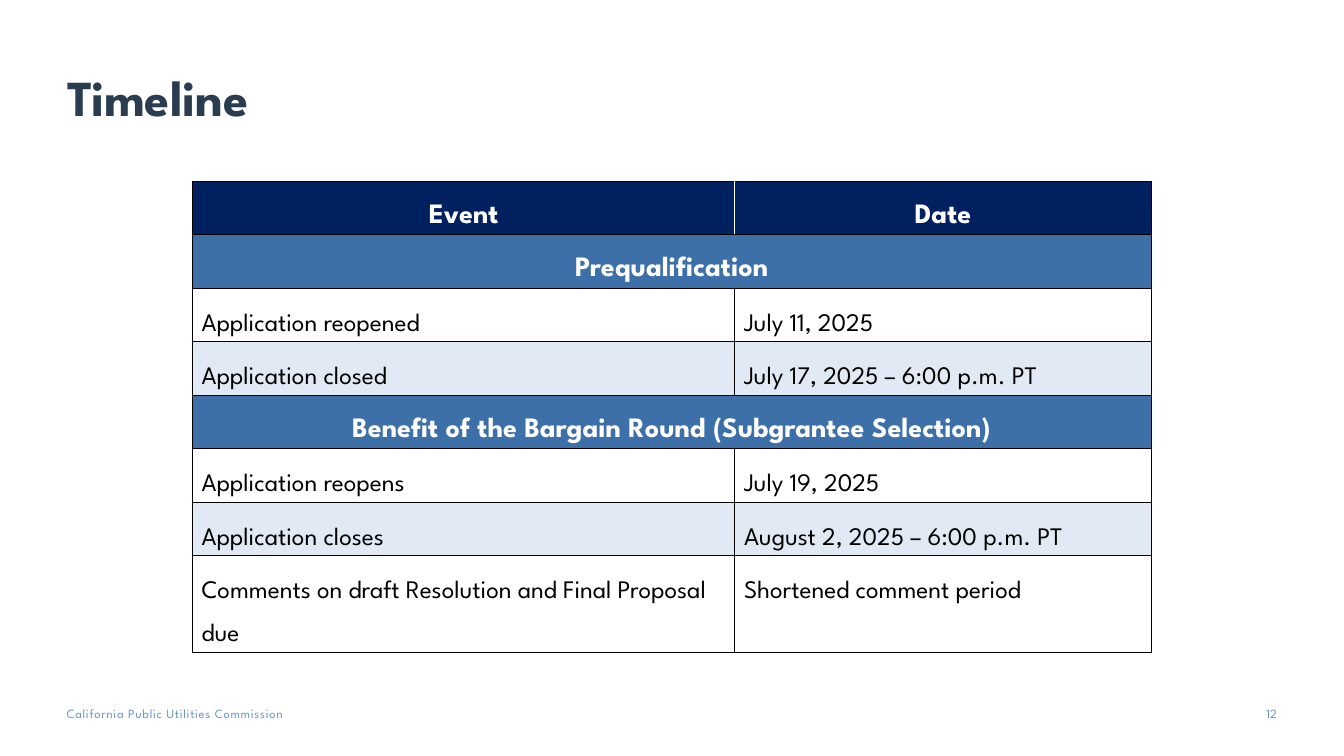
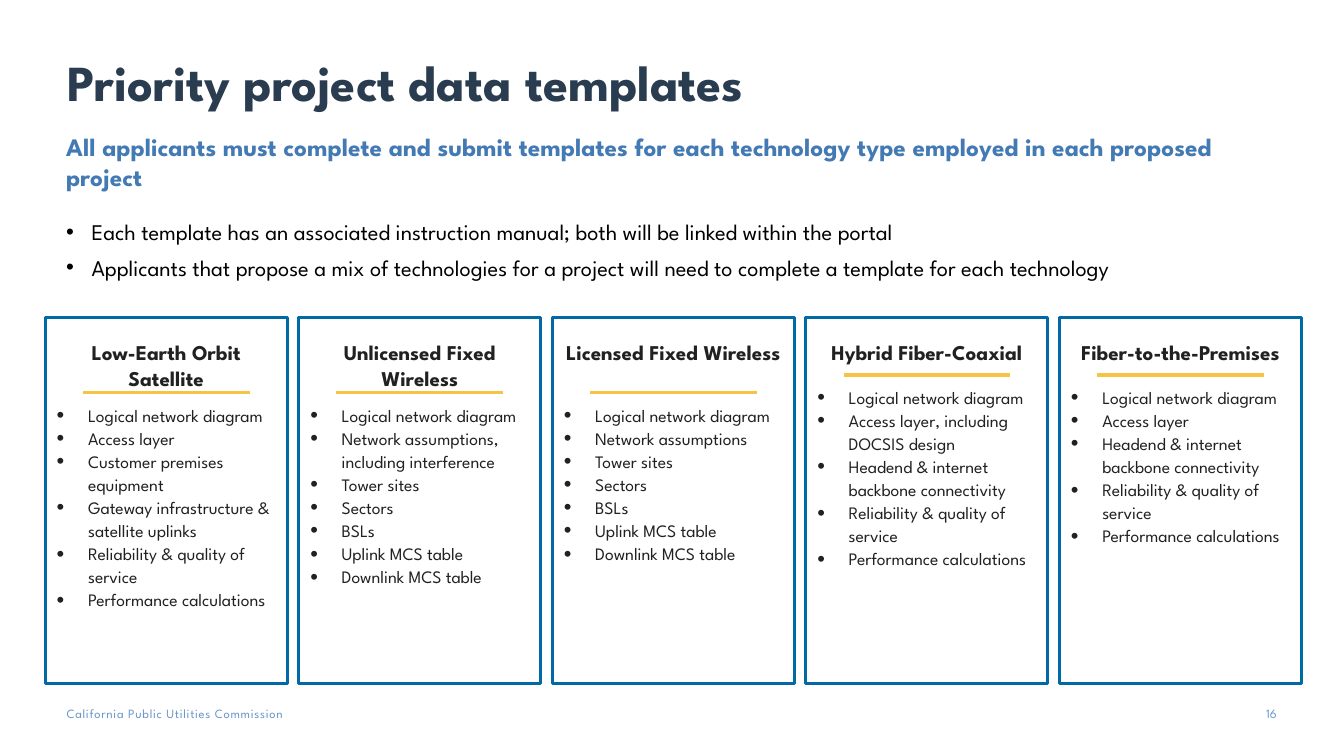
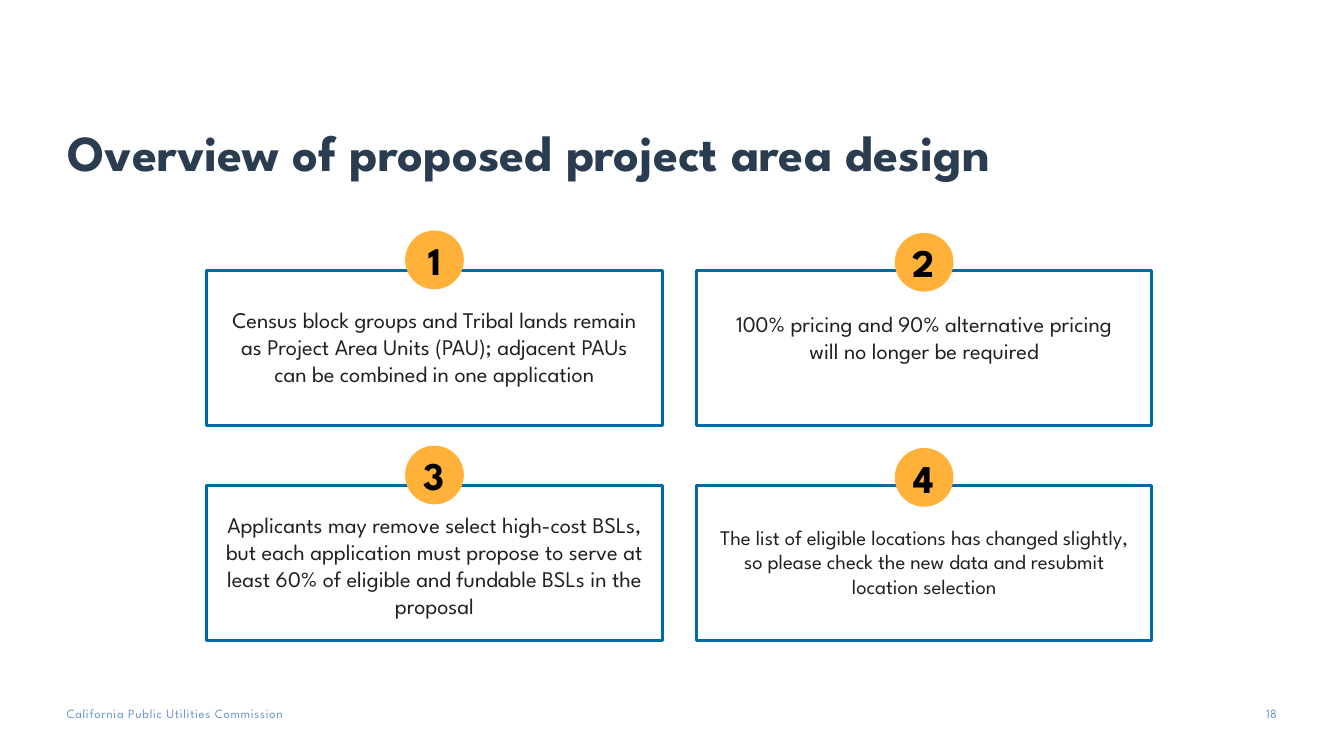
import dataclasses

import lxml.etree
import pptx
import pptx.dml.color
import pptx.enum.shapes
import pptx.enum.text
import pptx.oxml.ns
import pptx.util

Cm = pptx.util.Cm
Pt = pptx.util.Pt
qn = pptx.oxml.ns.qn
ALIGN = pptx.enum.text.PP_ALIGN
ANCHOR = pptx.enum.text.MSO_ANCHOR
SHAPE = pptx.enum.shapes.MSO_SHAPE


@dataclasses.dataclass(frozen=True)
class Theme:
    font: str = "League Spartan"
    title: str = "2A3C50"
    footer: str = "6996C9"
    subtitle: str = "437AB4"
    ink: str = "212121"
    black: str = "000000"
    white: str = "FFFFFF"
    outline: str = "0069A6"
    rule: str = "F5C445"
    badge: str = "FFB13A"
    header: str = "002060"
    section: str = "3D6FA9"
    band: str = "E1EAF4"
    title_size: float = 36
    badge_size: float = 28
    section_size: float = 20
    subtitle_size: float = 18
    cell_size: float = 18
    body_size: float = 16
    small_body_size: float = 14.8
    card_title_size: float = 15
    list_size: float = 12.5
    footer_size: float = 9
    line_width: float = 2.25


T = Theme()
FOOTER = "California Public Utilities Commission"
CENTER = {"alignment": ALIGN.CENTER}
NO_MARGINS = {f"margin_{side}": 0 for side in ("left", "right", "top", "bottom")}

TIMELINE = [
    ("Event", "Date"),
    ("Prequalification",),
    ("Application reopened", "July 11, 2025"),
    ("Application closed", "July 17, 2025 – 6:00 p.m. PT"),
    ("Benefit of the Bargain Round (Subgrantee Selection)",),
    ("Application reopens", "July 19, 2025"),
    ("Application closes", "August 2, 2025 – 6:00 p.m. PT"),
    ("Comments on draft Resolution and Final Proposal due", "Shortened comment period"),
]

DIAGRAM = "Logical network diagram"
HEADEND = "Headend & internet backbone connectivity"
QUALITY = ["Reliability & quality of service", "Performance calculations"]
WIRELESS = ["Tower sites", "Sectors", "BSLs", "Uplink MCS table", "Downlink MCS table"]
TECHNOLOGIES = [
    ("Low-Earth Orbit Satellite", 9.9,
     ["Access layer", "Customer premises equipment",
      "Gateway infrastructure & satellite uplinks", *QUALITY]),
    ("Unlicensed Fixed Wireless", 9.9,
     ["Network assumptions, including interference", *WIRELESS]),
    ("Licensed Fixed Wireless", 9.9, ["Network assumptions", *WIRELESS]),
    ("Hybrid Fiber-Coaxial", 9.45,
     ["Access layer, including DOCSIS design", HEADEND, *QUALITY]),
    ("Fiber-to-the-Premises", 9.45, ["Access layer", HEADEND, *QUALITY]),
]

DESIGN_POINTS = [
    ("Census block groups and Tribal lands remain as Project Area Units (PAU); "
     "adjacent PAUs can be combined in one application", 0.32, 0.79, T.body_size),
    ("100% pricing and 90% alternative pricing will no longer be required",
     0.32, 0.89, T.body_size),
    ("Applicants may remove select high-cost BSLs, but each application must propose "
     "to serve at least 60% of eligible and fundable BSLs in the proposal",
     0, 0.53, T.body_size),
    ("The list of eligible locations has changed slightly, so please check the new "
     "data and resubmit location selection", 0.32, 0.86, T.small_body_size),
]


def rgb(color):
    return pptx.dml.color.RGBColor.from_string(color)


def assign(target, values):
    for name, value in values.items():
        setattr(target, name, value)


def add_bullet(p, indent, percent):
    pPr = p._p.get_or_add_pPr()
    pPr.set("marL", str(Cm(indent)))
    pPr.set("indent", str(-Cm(indent)))
    for tag, name, value in (("a:buSzPct", "val", str(percent * 1000)),
                             ("a:buFont", "typeface", "Arial"),
                             ("a:buChar", "char", "•")):
        lxml.etree.SubElement(pPr, qn(tag)).set(name, value)


def write(tf, lines, size, color, bold=False, para=None, bullet=None):
    for i, line in enumerate(lines):
        p = tf.paragraphs[0] if i == 0 else tf.add_paragraph()
        assign(p, para or {})
        if bullet:
            add_bullet(p, *bullet)
        r = p.add_run()
        r.text = line
        assign(r.font, {"name": T.font, "size": Pt(size), "bold": bold})
        r.font.color.rgb = rgb(color)


def add_text(s, box, lines, size, color, frame=None, **style):
    tf = s.shapes.add_textbox(*map(Cm, box)).text_frame
    assign(tf, {"word_wrap": True, **(frame or {})})
    write(tf, lines, size, color, **style)
    return tf


def add_box(s, kind, box, fill, outline=None):
    sp = s.shapes.add_shape(kind, *map(Cm, box))
    sp.shadow.inherit = False
    sp.fill.solid()
    sp.fill.fore_color.rgb = rgb(fill)
    if outline:
        sp.line.color.rgb = rgb(outline)
        sp.line.width = Pt(T.line_width)
    else:
        sp.line.fill.background()
    return sp


def add_rule(s, x, y, width):
    line = s.shapes.add_connector(
        pptx.enum.shapes.MSO_CONNECTOR.STRAIGHT, Cm(x), Cm(y), Cm(x + width), Cm(y))
    line.line.color.rgb = rgb(T.rule)
    line.line.width = Pt(T.line_width)
    lxml.etree.SubElement(line._element.spPr, qn("a:effectLst"))


def add_slide(prs, title, number, top, height):
    s = prs.slides.add_slide(prs.slide_layouts[6])
    tf = add_text(s, (1.68, 17.78, 8.15, 0.4), [FOOTER], T.footer_size, T.footer,
                  frame=NO_MARGINS)
    tf.paragraphs[0].runs[0].font._element.set("spc", "50")
    add_text(s, (1.7, top, 30.48, height), [title], T.title_size, T.title, bold=True,
             frame={"margin_left": 0, "vertical_anchor": ANCHOR.BOTTOM})
    add_text(s, (31.12, 17.78, 1.06, 0.5), [str(number)], T.footer_size, T.footer,
             frame=NO_MARGINS, para={"alignment": ALIGN.RIGHT})
    return s


def set_borders(cell, colors):
    tcPr = cell._tc.get_or_add_tcPr()
    for side, color in zip("LRTB", colors):
        ln = lxml.etree.SubElement(tcPr, qn(f"a:ln{side}"), w=str(Pt(1)))
        fill = lxml.etree.SubElement(ln, qn("a:solidFill"))
        lxml.etree.SubElement(fill, qn("a:srgbClr"), val=color)


def format_cell(cell, fill, borders):
    set_borders(cell, borders)
    if fill:
        cell.fill.solid()
        cell.fill.fore_color.rgb = rgb(fill)
    else:
        cell.fill.background()
    assign(cell, {"margin_left": Cm(0.23), "margin_right": Cm(0.23),
                  "margin_top": Cm(0.13), "margin_bottom": Cm(0.13)})


def add_timeline(s):
    widths = (13.67, 10.49)
    heights = [1.32] * (len(TIMELINE) - 1) + [2.4]
    table = s.shapes.add_table(len(TIMELINE), len(widths), Cm(4.85), Cm(4.57),
                               Cm(sum(widths)), Cm(sum(heights))).table
    assign(table, {"first_row": False, "horz_banding": False})
    for column, width in zip(table.columns, widths):
        column.width = Cm(width)
    for i, (texts, height) in enumerate(zip(TIMELINE, heights)):
        table.rows[i].height = Cm(height)
        section = len(texts) == 1
        heading = i == 0 or section
        if section:
            table.cell(i, 0).merge(table.cell(i, 1))
        fill = (T.header if i == 0 else T.section if section
                else T.band if i % 3 == 0 else None)
        inner = T.white if i == 0 else T.black
        for j in range(len(widths)):
            sides = (T.black, inner) if j == 0 else (inner, T.black)
            format_cell(table.cell(i, j), fill, (*sides, T.black, T.black))
        for j, text in enumerate(texts):
            write(table.cell(i, j).text_frame, [text],
                  T.section_size if heading else T.cell_size,
                  T.white if heading else T.black, bold=heading,
                  para={"line_spacing": Pt(30.8),
                        "alignment": ALIGN.CENTER if heading else ALIGN.LEFT})


def add_technology(s, left, heading, rule_y, items):
    top, width = 8, 6.1
    add_box(s, SHAPE.RECTANGLE, (left, top, width, 9.22), T.white, T.outline)
    add_text(s, (left, top + 0.44, width, 1.9), [heading], T.card_title_size, T.ink,
             bold=True, para=CENTER)
    add_rule(s, left + 0.95, rule_y, 4.2)
    add_text(s, (left + 0.04, rule_y + 0.12, 6.02, 6), [DIAGRAM, *items], T.list_size,
             T.ink, para={"line_spacing": 1.1}, bullet=(0.79, 125))


def add_design_point(s, index, text, inset, drop, size):
    row, col = divmod(index, 2)
    width, height, badge = 11.48, 3.91, 1.48
    left, top = 5.21 + 12.34 * col, 6.81 + 5.42 * row
    add_box(s, SHAPE.RECTANGLE, (left, top, width, height), T.white, T.outline)
    add_text(s, (left + inset, top + drop, width - 2 * inset, 2.6), [text], size, T.ink,
             para=CENTER)
    sp = add_box(s, SHAPE.OVAL, (left + (width - badge) / 2, top - 1 + 0.06 * col,
                                 badge, badge), T.badge)
    assign(sp.text_frame, {**NO_MARGINS, "word_wrap": False,
                           "vertical_anchor": ANCHOR.MIDDLE})
    write(sp.text_frame, [str(index + 1)], T.badge_size, T.black, bold=True, para=CENTER)


def build_timeline(prs):
    add_timeline(add_slide(prs, "Timeline", 12, 1.02, 2.29))


def build_templates(prs):
    s = add_slide(prs, "Priority project data templates", 16, 0.64, 2.29)
    add_text(s, (1.42, 3.18, 30.73, 1.8),
             ["All applicants must complete and submit templates for each technology "
              "type employed in each proposed project"],
             T.subtitle_size, T.subtitle, bold=True)
    add_text(s, (1.42, 5.38, 32.84, 1.42),
             ["Each template has an associated instruction manual; both will be linked "
              "within the portal",
              "Applicants that propose a mix of technologies for a project will need to "
              "complete a template for each technology"],
             T.body_size, T.black, para={"space_after": Pt(6)}, bullet=(0.64, 100))
    for i, technology in enumerate(TECHNOLOGIES):
        add_technology(s, 1.14 + 6.39 * i, *technology)


def build_design(prs):
    s = add_slide(prs, "Overview of proposed project area design", 18, 1.02, 3.68)
    for i, point in enumerate(DESIGN_POINTS):
        add_design_point(s, i, *point)


def main():
    prs = pptx.Presentation()
    assign(prs, {"slide_width": Cm(33.87), "slide_height": Cm(19.05)})
    build_timeline(prs)
    build_templates(prs)
    build_design(prs)
    prs.save("out.pptx")


if __name__ == "__main__":
    main()
